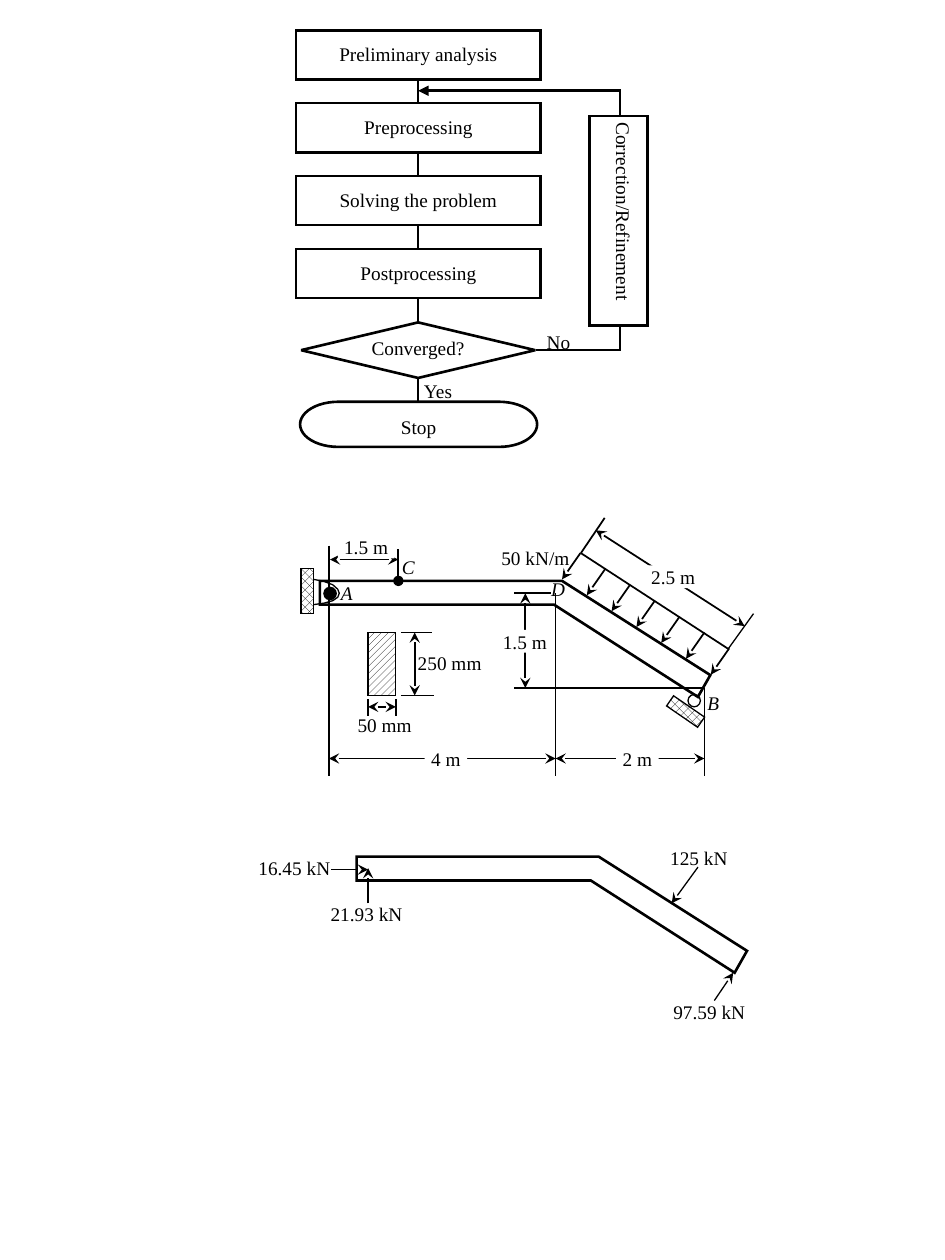
from lxml import etree
from pptx import Presentation
from pptx.dml.color import RGBColor
from pptx.enum.dml import MSO_PATTERN
from pptx.enum.shapes import MSO_CONNECTOR, MSO_SHAPE
from pptx.enum.text import MSO_ANCHOR, PP_ALIGN
from pptx.oxml.ns import qn
from pptx.util import Cm, Pt

RECT, OVAL = MSO_SHAPE.RECTANGLE, MSO_SHAPE.OVAL
DECISION, TERMINATOR = MSO_SHAPE.FLOWCHART_DECISION, MSO_SHAPE.FLOWCHART_TERMINATOR
STRAIGHT = MSO_CONNECTOR.STRAIGHT
CROSSED, HATCHED = MSO_PATTERN.PERCENT_50, MSO_PATTERN.WIDE_UPWARD_DIAGONAL
TOP, CENTER = MSO_ANCHOR.TOP, PP_ALIGN.CENTER
BLACK, WHITE = "000000", "FFFFFF"
FONT = "Times New Roman"
colour = RGBColor.from_string


def outline(shape, width, head=None, tail=None):
    """Black sharp-cornered line without shadow, with optional ends."""
    shape.line.color.rgb = colour(BLACK)
    shape.line.width = Pt(width)
    properties = shape.element.spPr
    ln = properties.find(qn("a:ln"))
    etree.SubElement(ln, qn("a:miter"), lim="800000")
    for tag, end in (("a:headEnd", head), ("a:tailEnd", tail)):
        if end:
            etree.SubElement(ln, qn(tag), type=end)
    etree.SubElement(properties, qn("a:effectLst"))


def write(shape, text, insets=(0, 0, 0, 0), wrap=True, italic=False):
    """One centred line of black text, anchored at the top."""
    frame = shape.text_frame
    frame.word_wrap = wrap
    frame.vertical_anchor = TOP
    frame.margin_left, frame.margin_top, frame.margin_right, frame.margin_bottom = map(Cm, insets)
    paragraph = frame.paragraphs[0]
    paragraph.alignment = CENTER
    run = paragraph.add_run()
    run.text = text
    run.font.name, run.font.size = FONT, Pt(11)
    run.font.color.rgb = colour(BLACK)
    if italic:
        run.font.italic = True


prs = Presentation()
prs.slide_width, prs.slide_height = Cm(19.05), Cm(25.4)
shapes = prs.slides.add_slide(prs.slide_layouts[6]).shapes

# Flowchart: spine behind the steps
spine = shapes.add_connector(STRAIGHT, Cm(8.43), Cm(1.6), Cm(8.43), Cm(8.1))
outline(spine, 1.5)

# Flowchart: steps
step_insets = (0.25, 0.25, 0.25, 0.13)
plain_insets = (0.25, 0.13, 0.25, 0.13)
step_names = ("Preliminary analysis", "Preprocessing", "Solving the problem", "Postprocessing")
steps = [(RECT, (5.97, 0.61 + 1.47 * i, 4.93, 0.99), name, step_insets)
         for i, name in enumerate(step_names)]
steps += [
    (DECISION, (6.07, 6.5, 4.72, 1.12), "Converged?", (0.25, 0, 0.25, 0.13)),
    (TERMINATOR, (6.05, 8.1, 4.78, 0.91), "Stop", plain_insets),
    (RECT, (11.89, 2.34, 1.17, 4.22), "Correction/Refinement", plain_insets),
]

# Flowchart: feedback loop runs behind the correction box
loop = [(Cm(x), Cm(y)) for x, y in ((10.8, 7.06), (12.5, 7.06), (12.5, 1.83), (8.43, 1.83))]
builder = shapes.build_freeform(*loop[0], scale=1.0)
builder.add_line_segments(loop[1:], close=False)
feedback = builder.convert_to_shape()
feedback.fill.background()
outline(feedback, 1.5, tail="triangle")

for kind, box, name, insets in steps:
    step = shapes.add_shape(kind, *map(Cm, box))
    step.fill.solid()
    step.fill.fore_color.rgb = colour(WHITE)
    outline(step, 1.5)
    write(step, name, insets, wrap=False)
# The correction box comes last and reads downwards
step.element.txBody.bodyPr.set("vert", "eaVert")

for x, y, answer in ((8.31, 7.65, "Yes"), (10.74, 6.65, "No")):
    write(shapes.add_textbox(Cm(x), Cm(y), Cm(1.04), Cm(0.51)), answer, wrap=False)

# Bent beam, once with its loads and once as a free body
beam_points = ((0, 0), (4.88, 0), (7.87, 1.9), (7.62, 2.34), (4.72, 0.48), (0, 0.48))
for left, top in ((6.45, 11.71), (7.19, 17.27)):
    corners = [(Cm(left + x), Cm(top + y)) for x, y in beam_points]
    builder = shapes.build_freeform(*corners[0], scale=1.0)
    builder.add_line_segments(corners[1:], close=True)
    beam = builder.convert_to_shape()
    beam.fill.solid()
    beam.fill.fore_color.rgb = colour(WHITE)
    outline(beam, 1.5)

# Supports and cross-section
for box, pattern, angle in (
    ((13.44, 14.22, 0.76, 0.25), CROSSED, 34.5),
    ((7.42, 12.75, 0.56, 1.27), HATCHED, 0),
    ((6.07, 11.46, 0.25, 0.91), CROSSED, 0),
):
    block = shapes.add_shape(RECT, *map(Cm, box))
    block.rotation = angle
    block.fill.patterned()
    block.fill.pattern = pattern
    block.fill.fore_color.rgb = colour(BLACK)
    block.fill.back_color.rgb = colour(WHITE)
    outline(block, 0.75)

bracket_points = [(Cm(x), Cm(y)) for x, y in (
    (6.32, 11.68), (6.53, 11.72), (6.71, 11.79), (6.81, 11.88), (6.84, 11.96),
    (6.81, 12.04), (6.71, 12.11), (6.53, 12.16), (6.32, 12.19))]
builder = shapes.build_freeform(*bracket_points[0], scale=1.0)
builder.add_line_segments(bracket_points[1:], close=False)
bracket = builder.convert_to_shape()
bracket.fill.background()
outline(bracket, 0.75)

roller = shapes.add_shape(OVAL, Cm(13.87), Cm(14), Cm(0.25), Cm(0.25))
roller.fill.background()
outline(roller, 0.75)
pin = shapes.add_shape(OVAL, Cm(6.53), Cm(11.84), Cm(0.25), Cm(0.25))
pin.fill.solid()
pin.fill.fore_color.rgb = colour(BLACK)
outline(pin, 0.75)

# Lines, grouped by width and ends
distributed_load = [(11.33 + 0.5 * i, 11.68 + 0.32 * i, 11.7 + 0.5 * i, 11.15 + 0.32 * i)
                    for i in range(7)]
dimensions = [
    (12.01, 10.69, 15.01, 12.62), (6.63, 15.29, 11.2, 15.29), (11.2, 15.29, 14.2, 15.29),
    (10.59, 11.96, 10.59, 13.87), (8.36, 12.75, 8.36, 14.02), (7.42, 14.25, 7.98, 14.25),
    (6.65, 11.28, 8.03, 11.28),
]
extensions = [
    (11.71, 11.15, 14.68, 13.08), (6.63, 11, 6.63, 15.65), (11.2, 11.96, 11.2, 15.65),
    (14.2, 13.87, 14.2, 15.65), (8.08, 12.75, 8.71, 12.75), (8.08, 14.02, 8.74, 14.02),
    (7.42, 14.1, 7.42, 14.43), (7.98, 14.1, 7.98, 14.43), (11.1, 11.96, 10.36, 11.96),
    (14.17, 13.87, 10.36, 13.87), (11.71, 11.15, 12.19, 10.44),
]
reactions = [(7.42, 18.21, 7.42, 17.5), (6.68, 17.53, 7.42, 17.53), (14.4, 20.17, 14.78, 19.61)]
for lines, width, head, tail in (
    (distributed_load, 1, "stealth", None),
    (dimensions, 1, "stealth", "stealth"),
    (extensions, 1, None, None),
    ([(8.03, 11.07, 8.03, 11.71)], 1, None, "oval"),
    ([(14.68, 13.08, 15.19, 12.37)], 0.75, None, None),
    ([(13.54, 18.21, 14.07, 17.48)], 0.75, "stealth", None),
    (reactions, 0.75, None, "stealth"),
):
    for ends in lines:
        outline(shapes.add_connector(STRAIGHT, *map(Cm, ends)), width, head, tail)

# Dimension labels that interrupt their lines
for x, y, width, length in (
    (8.56, 15.06, 0.86, "4 m"), (12.42, 15.06, 0.86, "2 m"), (10.01, 12.7, 1.14, "1.5 m"),
    (13, 11.4, 1.14, "2.5 m"), (6.81, 10.8, 1.14, "1.5 m"),
):
    label = shapes.add_shape(RECT, Cm(x), Cm(y), Cm(width), Cm(0.46))
    label.shadow.inherit = False
    label.fill.solid()
    label.fill.fore_color.rgb = colour(WHITE)
    label.line.fill.background()
    write(label, length)

# Point names, section sizes and forces
for x, y, width, height, text in (
    (8.33, 13.13, 1.47, 0.46, "250 mm"), (7.16, 14.38, 1.19, 0.46, "50 mm"),
    (8, 11.2, 0.46, 0.46, "C"), (11.02, 11.63, 0.46, 0.46, "D"),
    (6.76, 11.71, 0.46, 0.46, "A"), (14.15, 13.94, 0.46, 0.46, "B"),
    (10.06, 11.02, 1.47, 0.46, "50 kN/m"), (13.39, 17.07, 1.4, 0.51, "125 kN"),
    (13.46, 20.17, 1.68, 0.48, "97.59 kN"), (6.63, 18.19, 1.52, 0.51, "21.93 kN"),
    (5.16, 17.27, 1.55, 0.51, "16.45 kN"),
):
    label = shapes.add_textbox(Cm(x), Cm(y), Cm(width), Cm(height))
    write(label, text, italic=len(text) == 1)

prs.save("out.pptx")
